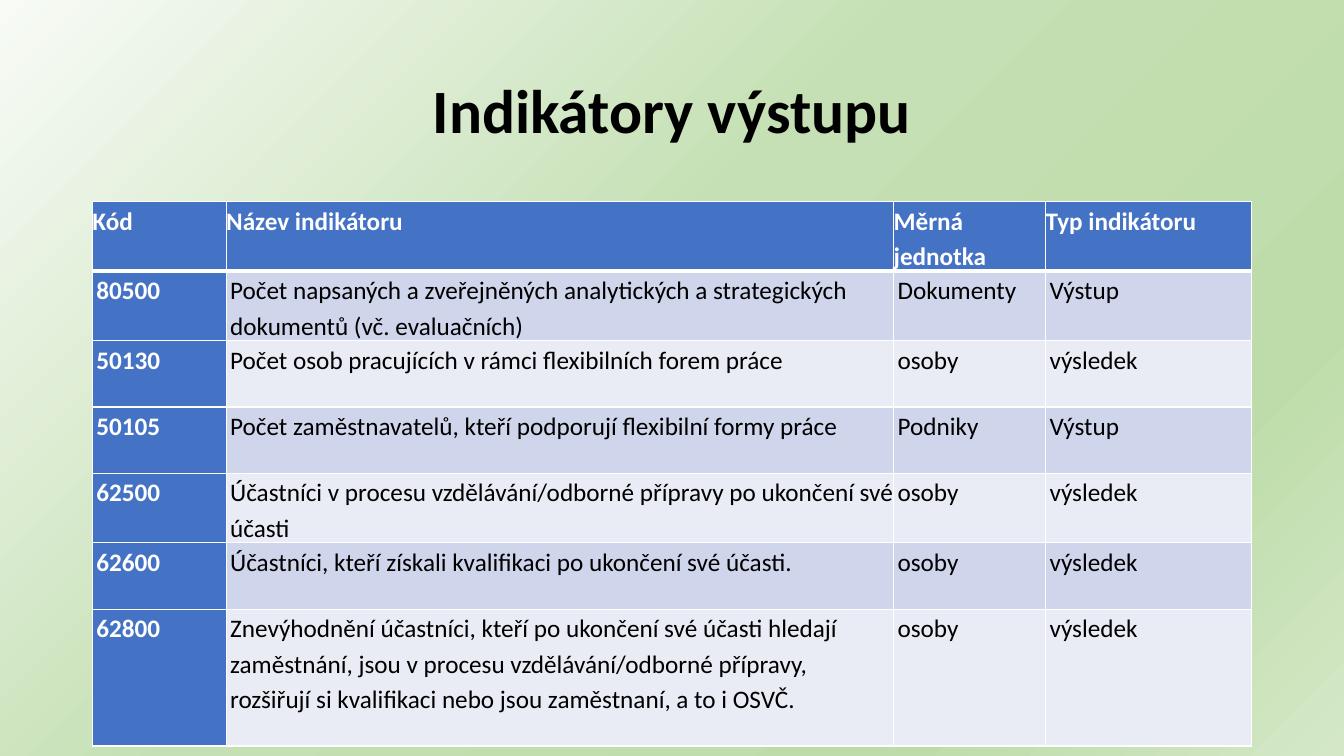
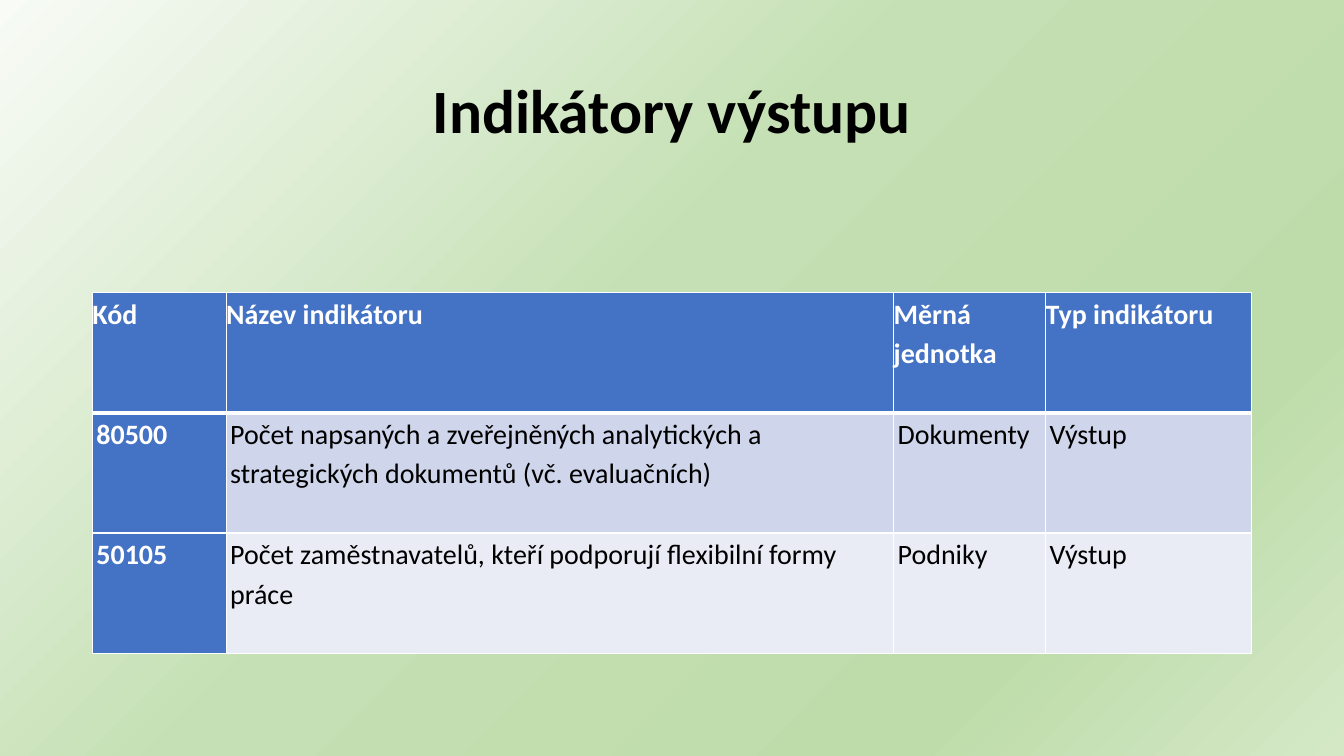
"""Builds two slides with tables of output indicators."""
from lxml import etree
from pptx import Presentation
from pptx import util as u
from pptx.dml.color import RGBColor
from pptx.enum import text
from pptx.oxml.ns import qn

FONT = "Calibri"
WHITE, BLACK, BLUE = "FFFFFF", "000000", "4472C4"
BANDS = ("CFD5EA", "E9EBF5")
BACKDROP = ((0, "F8FBF6"), (44, "C5E0B4"), (79, "BEDCAA"), (100, "D4E8C6"))
BACKDROP_ANGLE = 45

LEFT, WIDTH = 2.33, 29.21
COLUMN_WIDTHS = (3.37, 16.82, 3.83, 5.19)
TITLE = "Indikátory výstupu"
HEADINGS = ("Kód", "Název indikátoru", "Měrná jednotka", "Typ indikátoru")

DOCUMENTS = (
    "80500",
    "Počet napsaných a zveřejněných analytických a strategických dokumentů (vč. evaluačních)",
    "Dokumenty", "Výstup")
EMPLOYERS = (
    "50105",
    "Počet zaměstnavatelů, kteří podporují flexibilní formy práce",
    "Podniky", "Výstup")

SLIDES = [
    {
        "top": 5.08, "size": 18, "heights": [1.67] * 6 + [3.45],
        "indicators": [
            DOCUMENTS,
            ("50130", "Počet osob pracujících v rámci flexibilních forem práce",
             "osoby", "výsledek"),
            EMPLOYERS,
            ("62500",
             "Účastníci v procesu vzdělávání/odborné přípravy po ukončení své účasti",
             "osoby", "výsledek"),
            ("62600", "Účastníci, kteří získali kvalifikaci po ukončení své účasti.",
             "osoby", "výsledek"),
            ("62800",
             "Znevýhodnění účastníci, kteří po ukončení své účasti hledají zaměstnání, "
             "jsou v procesu vzdělávání/odborné přípravy, rozšiřují si kvalifikaci "
             "nebo jsou zaměstnaní, a to i OSVČ.",
             "osoby", "výsledek"),
        ],
    },
    {
        "top": 7.37, "size": 20, "heights": [3.03] * 3,
        "indicators": [DOCUMENTS, EMPLOYERS],
    },
]


def rgb(value):
    return RGBColor.from_string(value)


def set_font(paragraph, size, color, bold):
    font = paragraph.font
    font.name, font.size, font.bold = FONT, u.Pt(size), bold
    font.color.rgb = rgb(color)


def paint_backdrop(master):
    master.background.fill.gradient()
    gradient = next(master.element.iter(qn("a:gradFill")))
    stops = gradient.find(qn("a:gsLst"))
    for stop in list(stops):
        stops.remove(stop)
    for percent, color in BACKDROP:
        stop = etree.SubElement(stops, qn("a:gs"), pos=str(percent * 1000))
        etree.SubElement(stop, qn("a:srgbClr"), val=color)
    gradient.find(qn("a:lin")).set("ang", str(BACKDROP_ANGLE * 60000))


def add_title(slide):
    title = slide.shapes.add_textbox(u.Cm(LEFT), u.Cm(1.01), u.Cm(WIDTH), u.Cm(3.68))
    frame = title.text_frame
    frame.word_wrap = True
    frame.vertical_anchor = text.MSO_ANCHOR.MIDDLE
    paragraph = frame.paragraphs[0]
    paragraph.text = TITLE
    paragraph.alignment = text.PP_ALIGN.CENTER
    paragraph.line_spacing = 0.9
    set_font(paragraph, 44, BLACK, True)


def set_borders(cell, row):
    widths = {"L": 1, "R": 1, "T": 3 if row == 1 else 1, "B": 3 if row == 0 else 1}
    properties = cell._tc.get_or_add_tcPr()
    for side, width in widths.items():
        line = etree.SubElement(properties, qn(f"a:ln{side}"), w=str(u.Pt(width)))
        fill = etree.SubElement(line, qn("a:solidFill"))
        etree.SubElement(fill, qn("a:srgbClr"), val=WHITE)


def fill_cell(cell, content, row, column, size):
    heading = row == 0
    strong = heading or column == 0
    set_borders(cell, row)
    cell.fill.solid()
    cell.fill.fore_color.rgb = rgb(BLUE if strong else BANDS[(row - 1) % 2])
    cell.margin_left = u.Cm(0 if heading else 0.1)
    cell.margin_right = cell.margin_top = cell.margin_bottom = 0
    paragraph = cell.text_frame.paragraphs[0]
    paragraph.text = content
    paragraph.alignment = text.PP_ALIGN.JUSTIFY if heading else text.PP_ALIGN.LEFT
    paragraph.line_spacing = 1.15
    paragraph.space_before = u.Pt(0 if heading else 3)
    paragraph.space_after = u.Pt(6 if heading else 3)
    set_font(paragraph, size, WHITE if strong else BLACK, strong)


def add_indicators(slide, top, size, heights, indicators):
    rows = [HEADINGS, *indicators]
    table = slide.shapes.add_table(
        len(rows), len(HEADINGS), u.Cm(LEFT), u.Cm(top), u.Cm(WIDTH), u.Cm(sum(heights))
    ).table
    for column, width in zip(table.columns, COLUMN_WIDTHS):
        column.width = u.Cm(width)
    for r, (contents, height) in enumerate(zip(rows, heights)):
        table.rows[r].height = u.Cm(height)
        for c, content in enumerate(contents):
            fill_cell(table.cell(r, c), content, r, c, size)


def main():
    deck = Presentation()
    deck.slide_width, deck.slide_height = u.Cm(33.87), u.Cm(19.05)
    paint_backdrop(deck.slide_master)
    for content in SLIDES:
        slide = deck.slides.add_slide(deck.slide_layouts[6])
        add_title(slide)
        add_indicators(slide, **content)
    deck.save("out.pptx")


if __name__ == "__main__":
    main()
